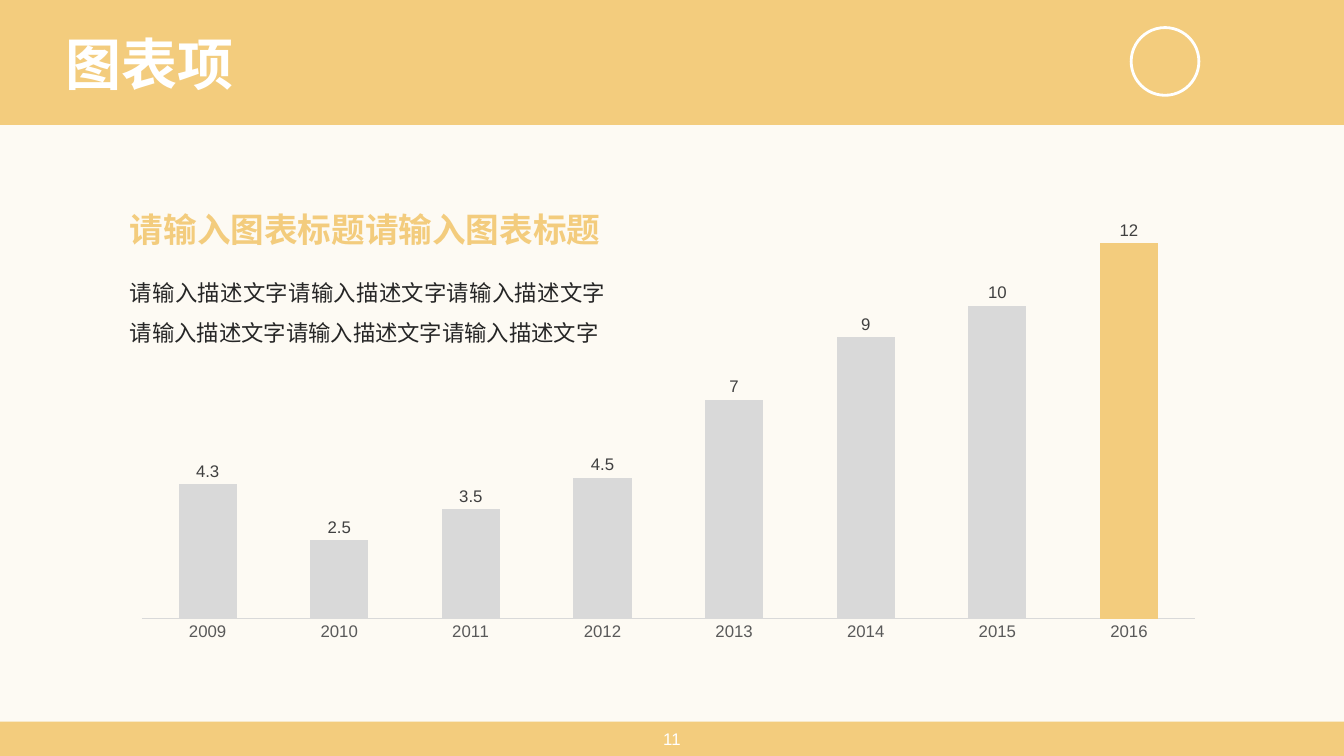
"""Build a chart slide: title band, highlighted column chart, caption and page number."""
from lxml.etree import SubElement
from pptx import Presentation
from pptx.chart.data import CategoryChartData
from pptx.dml.color import RGBColor
from pptx.enum.chart import XL_CHART_TYPE, XL_LABEL_POSITION, XL_TICK_LABEL_POSITION, XL_TICK_MARK
from pptx.enum.shapes import MSO_SHAPE
from pptx.enum.text import MSO_ANCHOR, PP_ALIGN
from pptx.oxml.ns import qn
from pptx.util import Pt

TITLE = "图表项"
PAGE = "11"
CAPTION = "请输入图表标题" * 2
DESCRIPTION = "请输入描述文字" * 6
SERIES = "Series 1"
VALUES = {"2009": 4.3, "2010": 2.5, "2011": 3.5, "2012": 4.5,
          "2013": 7, "2014": 9, "2015": 10, "2016": 12}
HIGHLIGHT = "2016"

THEME = {
    "accent": "F3CC7D", "white": "FFFFFF", "bar": "D9D9D9",
    "body": "262626", "label": "404040", "axis": "595959",
    "latin": "Arial", "cjk": "Noto Sans CJK SC",
    "title_size": 40, "caption_size": 24, "body_size": 16, "small_size": 12,
    "panel_opacity": 91,
}

WIDTH, HEIGHT = 960, 540
PANEL = (0, 89.3, WIDTH, 426.2)
EMBLEM = (807, 18.7, 50.4, 50.4)
TITLE_BOX = (39.6, 24.5, 515.5, 46.8)
PAGE_BOX = (372, 516.2, 216, 23)
CHART_BOX = (85.7, 122.4, 783.4, 342)
CAPTION_BOX = (85.7, 131, 354.2, 117.4)


def points(box):
    return [Pt(length) for length in box]


def paint(fill, color):
    fill.solid()
    fill.fore_color.rgb = RGBColor.from_string(THEME[color])


def style(font, size, color, bold=False, latin="latin"):
    font.name = THEME[latin]
    font.size = Pt(THEME[size])
    font.bold = bold
    font.color.rgb = RGBColor.from_string(THEME[color])


def add_plain_shape(slide, kind, box):
    shape = slide.shapes.add_shape(kind, *points(box))
    shape.shadow.inherit = False
    paint(shape.fill, "white")
    shape.line.fill.background()
    return shape


def add_text(slide, box, lines, align, anchor=MSO_ANCHOR.TOP):
    frame = slide.shapes.add_textbox(*points(box)).text_frame
    frame.word_wrap = True
    frame.vertical_anchor = anchor
    frame.text = "\n".join(text for text, *_ in lines)
    for paragraph, (_, *look) in zip(frame.paragraphs, lines):
        paragraph.alignment = align
        run = paragraph.runs[0]
        style(run.font, *look)
        east_asian = SubElement(run.font._element, qn("a:ea"))
        east_asian.set("typeface", THEME["cjk"])
    return frame


def add_column_chart(slide):
    data = CategoryChartData()
    data.categories = list(VALUES)
    data.add_series(SERIES, list(VALUES.values()))
    chart = slide.shapes.add_chart(
        XL_CHART_TYPE.COLUMN_CLUSTERED, *points(CHART_BOX), data).chart
    chart.has_legend = False
    chart.has_title = False
    style(chart.font, "small_size", "axis")

    years = chart.category_axis
    years.major_tick_mark = XL_TICK_MARK.NONE
    years.format.line.width = Pt(0.75)
    paint(years.format.line.fill, "bar")
    style(years.tick_labels.font, "small_size", "axis")

    scale = chart.value_axis
    scale.minimum_scale, scale.maximum_scale = 0, 14
    scale.has_major_gridlines = False
    scale.tick_label_position = XL_TICK_LABEL_POSITION.NONE
    scale.visible = False

    plot = chart.plots[0]
    plot.gap_width, plot.overlap = 126, -27
    plot.vary_by_categories = False
    columns = plot.series[0]
    paint(columns.format.fill, "bar")
    paint(columns.points[list(VALUES).index(HIGHLIGHT)].format.fill, "accent")
    labels = columns.data_labels
    labels.show_value = True
    labels.position = XL_LABEL_POSITION.OUTSIDE_END
    style(labels.font, "small_size", "label")


def main():
    deck = Presentation()
    deck.slide_width, deck.slide_height = Pt(WIDTH), Pt(HEIGHT)
    slide = deck.slides.add_slide(deck.slide_layouts[6])
    paint(slide.background.fill, "accent")

    panel = add_plain_shape(slide, MSO_SHAPE.RECTANGLE, PANEL)
    panel_color = panel._element.spPr.find(qn("a:solidFill"))[0]
    SubElement(panel_color, qn("a:alpha")).set("val", str(THEME["panel_opacity"] * 1000))
    emblem = add_plain_shape(slide, MSO_SHAPE.DONUT, EMBLEM)
    emblem.adjustments[0] = 0.04

    add_text(slide, PAGE_BOX, [(PAGE, "small_size", "white")],
             PP_ALIGN.CENTER, MSO_ANCHOR.MIDDLE)
    title = add_text(slide, TITLE_BOX, [(TITLE, "title_size", "white", True, "cjk")],
                     PP_ALIGN.LEFT, MSO_ANCHOR.MIDDLE)
    title.paragraphs[0].line_spacing = 0.9
    add_column_chart(slide)
    caption = add_text(slide, CAPTION_BOX,
                       [(CAPTION, "caption_size", "accent", True),
                        (DESCRIPTION, "body_size", "body")], PP_ALIGN.JUSTIFY)
    for paragraph in caption.paragraphs:
        paragraph.line_spacing = 1.5
        paragraph.space_after = Pt(12)

    deck.save("out.pptx")


if __name__ == "__main__":
    main()
